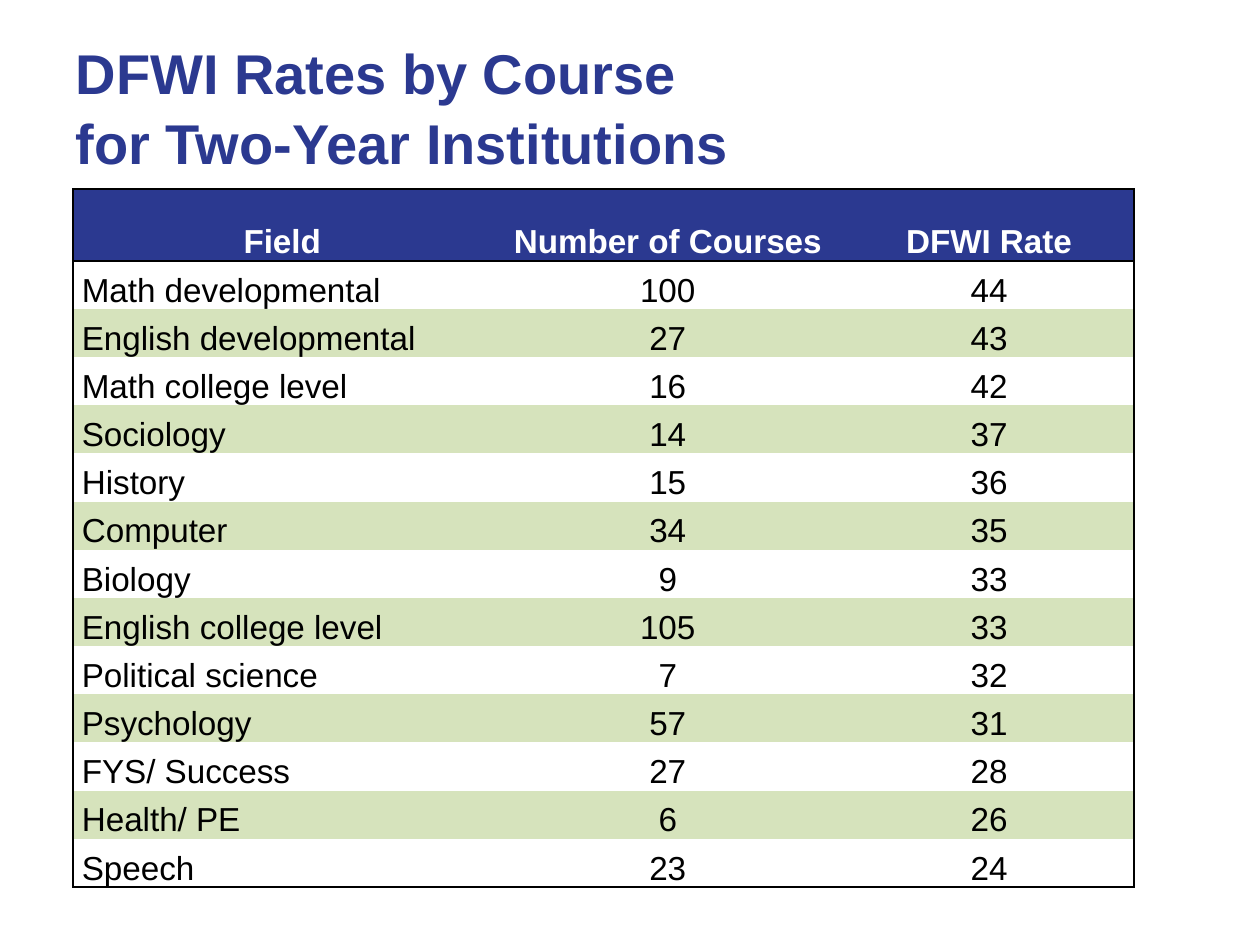
import pptx
import pptx.dml.color
import pptx.enum.text
import pptx.oxml
import pptx.oxml.ns
import pptx.util

Inches = pptx.util.Inches
Pt = pptx.util.Pt
PP_ALIGN = pptx.enum.text.PP_ALIGN
MSO_ANCHOR = pptx.enum.text.MSO_ANCHOR

NAVY = pptx.dml.color.RGBColor(0x2B, 0x39, 0x90)
GREEN = pptx.dml.color.RGBColor(0xD6, 0xE3, 0xBC)
WHITE = pptx.dml.color.RGBColor(0xFF, 0xFF, 0xFF)
BLACK = pptx.dml.color.RGBColor(0x00, 0x00, 0x00)
FONT = "Arial"

TITLE = "DFWI Rates by Course \vfor Two-Year Institutions"
HEADINGS = ("Field", "Number of Courses", "DFWI Rate")
COURSES = (
    ("Math developmental", 100, 44),
    ("English developmental", 27, 43),
    ("Math college level", 16, 42),
    ("Sociology", 14, 37),
    ("History", 15, 36),
    ("Computer", 34, 35),
    ("Biology", 9, 33),
    ("English college level", 105, 33),
    ("Political science", 7, 32),
    ("Psychology", 57, 31),
    ("FYS/ Success", 27, 28),
    ("Health/ PE", 6, 26),
    ("Speech", 23, 24),
)
COLUMN_WIDTHS = (3.32, 2.8, 2.3)
HEADER_HEIGHT = 0.57


def style_font(font, size, color, bold):
    """Apply the slide typeface with the given size, colour and weight."""
    font.name = FONT
    font.size = Pt(size)
    font.color.rgb = color
    font.bold = bold


def set_borders(cell, sides):
    """Draw a thin black line on the named sides and none on the others."""
    properties = cell._tc.get_or_add_tcPr()
    for side in "LRTB":
        line = pptx.oxml.parse_xml(
            f'<a:ln{side} {pptx.oxml.ns.nsdecls("a")} w="12700"/>')
        if side in sides:
            fill = pptx.oxml.parse_xml(
                f'<a:solidFill {pptx.oxml.ns.nsdecls("a")}>'
                f'<a:srgbClr val="{BLACK}"/></a:solidFill>')
        else:
            fill = pptx.oxml.parse_xml(f'<a:noFill {pptx.oxml.ns.nsdecls("a")}/>')
        line.append(fill)
        properties.append(line)


def format_cell(cell, value, row, column):
    """Fill one table cell and style it by its place in the grid."""
    header = row == 0
    cell.margin_left = cell.margin_right = Inches(0.07)
    cell.margin_top = cell.margin_bottom = 0
    cell.vertical_anchor = MSO_ANCHOR.BOTTOM
    cell.text_frame.text = str(value)
    para = cell.text_frame.paragraphs[0]
    para.line_spacing = 1.15
    centred = header or column > 0
    para.alignment = PP_ALIGN.CENTER if centred else PP_ALIGN.LEFT
    style_font(para.runs[0].font, 19, WHITE if header else BLACK, header)

    sides = {
        "L": column == 0,
        "R": column == len(HEADINGS) - 1,
        "T": row <= 1,
        "B": row in (0, len(COURSES)),
    }
    set_borders(cell, [side for side, drawn in sides.items() if drawn])
    if header or row % 2 == 0:
        cell.fill.solid()
        cell.fill.fore_color.rgb = NAVY if header else GREEN
    else:
        cell.fill.background()


def add_title(page, left, top, width, height):
    """Place and format the title in the given box."""
    title = page.shapes.title
    title.left, title.top, title.width, title.height = left, top, width, height
    frame = title.text_frame
    frame.text = TITLE
    frame.word_wrap = True
    frame.auto_size = pptx.enum.text.MSO_AUTO_SIZE.NONE
    frame.vertical_anchor = MSO_ANCHOR.MIDDLE
    para = frame.paragraphs[0]
    para.alignment = PP_ALIGN.LEFT
    para.line_spacing = 1.05
    for span in para.runs:
        style_font(span.font, 32, NAVY, True)


def add_rate_table(page, left, top, width, height):
    """Build the table of course rates in the given box."""
    rows = (HEADINGS,) + COURSES
    table = page.shapes.add_table(
        len(rows), len(HEADINGS), left, top, width, height).table
    table.horz_banding = False
    for column, share in zip(table.columns, COLUMN_WIDTHS):
        column.width = int(width * share / sum(COLUMN_WIDTHS))
    header_height = Inches(HEADER_HEIGHT)
    for index, values in enumerate(rows):
        table.rows[index].height = (
            header_height if index == 0 else (height - header_height) // len(COURSES))
        for column, value in enumerate(values):
            format_cell(table.cell(index, column), value, index, column)


def main():
    """Create the deck with its single slide and save it."""
    deck = pptx.Presentation()
    deck.slide_width, deck.slide_height = Inches(10), Inches(7.5)
    page = deck.slides.add_slide(deck.slide_layouts.get_by_name("Title Only"))
    add_title(page, Inches(0.5), Inches(0.17), Inches(9.5), Inches(1.33))
    add_rate_table(page, Inches(0.58), Inches(1.5), Inches(8.42), Inches(5.54))
    deck.save("out.pptx")


if __name__ == "__main__":
    main()
